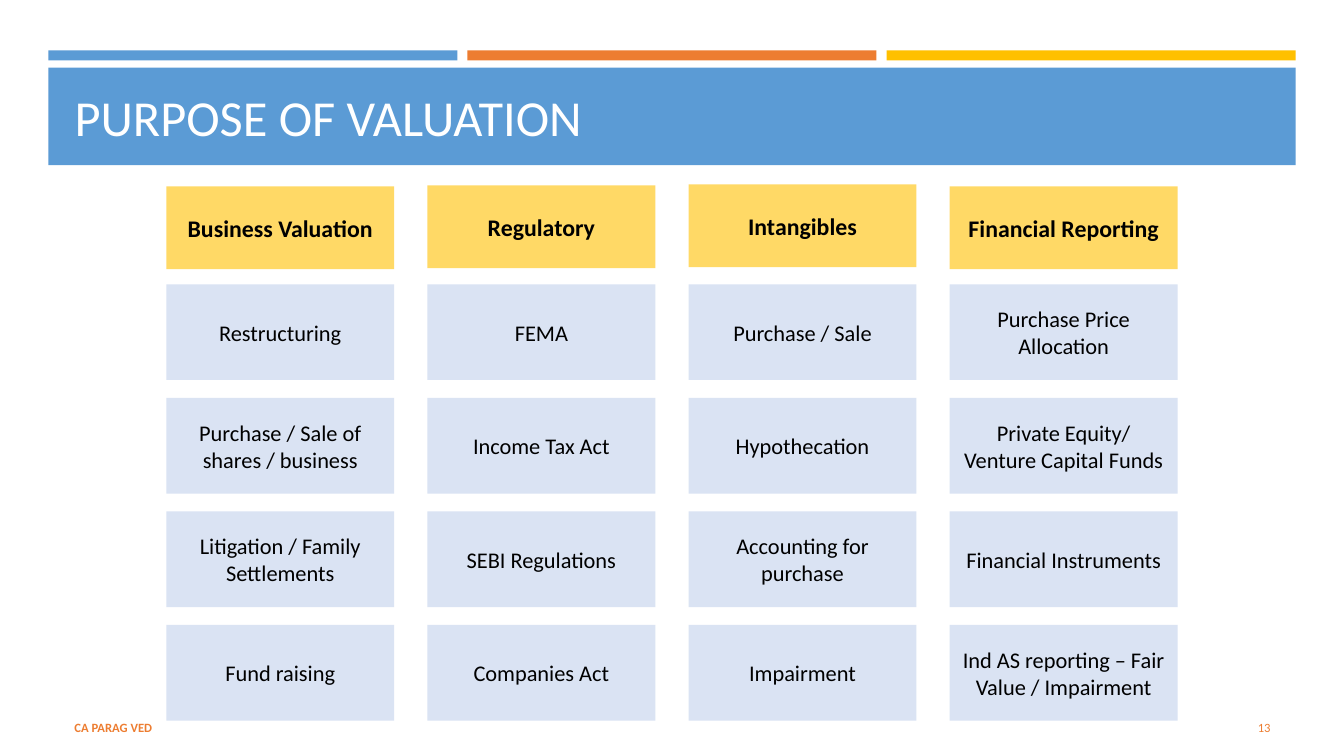
from pptx import Presentation
from pptx.dml.color import RGBColor
from pptx.enum.shapes import MSO_SHAPE
from pptx.enum.text import MSO_ANCHOR, PP_ALIGN
from pptx.util import Inches, Pt

COLORS = {
    "blue": "5B9BD5", "orange": "ED7D31", "gold": "FFC000",
    "header": "FFD966", "cell": "DAE3F3", "black": "000000", "white": "FFFFFF",
}
FONT = "Calibri"

# Heading, upward nudge of the heading, purposes
PURPOSES = [
    ("Business Valuation", 0, ["Restructuring", "Purchase / Sale of shares / business",
                               "Litigation / Family Settlements", "Fund raising"]),
    ("Regulatory", 0.01, ["FEMA", "Income Tax Act", "SEBI Regulations", "Companies Act"]),
    ("Intangibles", 0.02, ["Purchase / Sale", "Hypothecation",
                           "Accounting for purchase", "Impairment"]),
    ("Financial Reporting", 0, ["Purchase Price Allocation",
                                "Private Equity/ Venture Capital Funds",
                                "Financial Instruments",
                                "Ind AS reporting – Fair Value / Impairment"]),
]


def write(box, text, size=16, color="black", bold=False, align=PP_ALIGN.LEFT):
    frame = box.text_frame
    frame.word_wrap = True
    frame.vertical_anchor = MSO_ANCHOR.MIDDLE
    para = frame.paragraphs[0]
    para.alignment = align
    span = para.add_run()
    span.text = text
    span.font.name = FONT
    span.font.size = Pt(size)
    span.font.bold = bold
    span.font.color.rgb = RGBColor.from_string(COLORS[color])


def add_block(page, left, top, width, height, fill):
    block = page.shapes.add_shape(MSO_SHAPE.RECTANGLE, Inches(left), Inches(top),
                                  Inches(width), Inches(height))
    block.shadow.inherit = False
    block.fill.solid()
    block.fill.fore_color.rgb = RGBColor.from_string(COLORS[fill])
    block.line.fill.background()
    return block


def add_banner(page, left, top, width):
    # Three accent bars above the title band
    gap = 0.1
    bar_width = (width - 2 * gap) / 3
    for index, fill in enumerate(["blue", "orange", "gold"]):
        add_block(page, left + index * (bar_width + gap), top, bar_width, 0.1, fill)
    add_block(page, left, top + 0.17, width, 0.97, "blue")

    # Title placeholder, brought in front of the band
    title = page.shapes.title
    title.left, title.top = Inches(left + 0.16), Inches(top + 0.24)
    title.width, title.height = Inches(width - 0.31), Inches(0.83)
    write(title, "PURPOSE OF VALUATION", size=36, color="white")
    title.element.getparent().append(title.element)


def add_purpose_grid(page, left, top, width, height):
    box_width, header_height, cell_height = 2.26, 0.82, 0.95
    column_step = (width - box_width) / (len(PURPOSES) - 1)
    first_row = top + 0.97
    row_step = (top + height - cell_height - first_row) / 3
    for column, (heading, nudge, purposes) in enumerate(PURPOSES):
        x = left + column * column_step
        header = add_block(page, x, top - nudge, box_width, header_height, "header")
        write(header, heading, size=17, bold=True, align=PP_ALIGN.CENTER)
        for row, purpose in enumerate(purposes):
            cell = add_block(page, x, first_row + row * row_step,
                             box_width, cell_height, "cell")
            write(cell, purpose, align=PP_ALIGN.CENTER)


def add_footer(page, left, top, width):
    height, number_width = 0.4, 1.15
    author = page.shapes.add_textbox(Inches(left), Inches(top), Inches(7.56), Inches(height))
    write(author, "CA PARAG VED", size=9, color="orange", bold=True)
    number = page.shapes.add_textbox(Inches(left + width - number_width), Inches(top),
                                     Inches(number_width), Inches(height))
    write(number, "13", size=9, color="orange", align=PP_ALIGN.RIGHT)


def main():
    deck = Presentation()
    deck.slide_width, deck.slide_height = Inches(13.33), Inches(7.5)
    page = deck.slides.add_slide(deck.slide_layouts[5])
    add_banner(page, 0.48, 0.5, 12.37)
    add_purpose_grid(page, 1.65, 1.85, 10.03, 5.3)
    add_footer(page, 0.64, 7.02, 12.06)
    deck.save("out.pptx")


if __name__ == "__main__":
    main()
